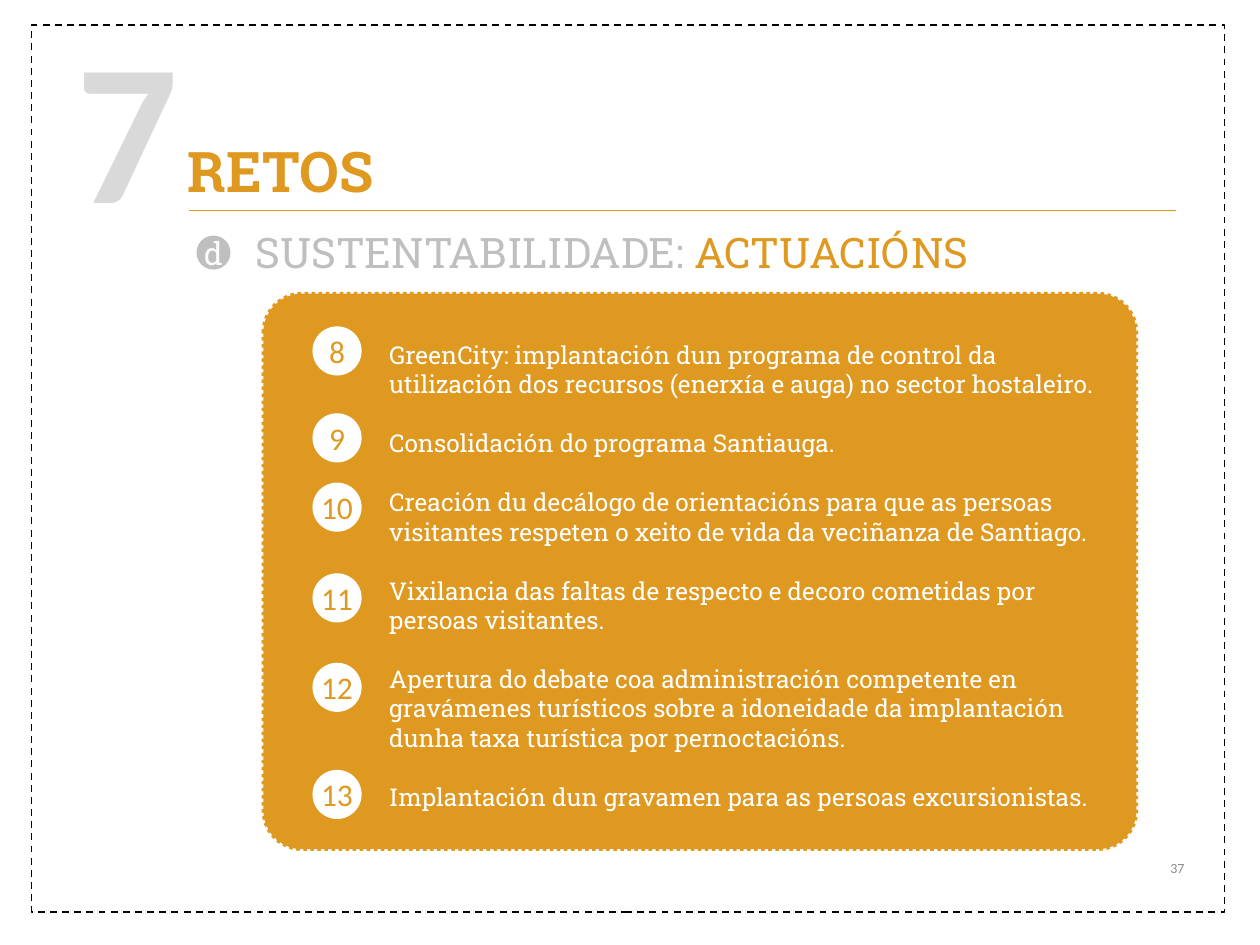
from lxml.etree import SubElement
from pptx import Presentation
from pptx.dml.color import RGBColor
from pptx.enum.dml import MSO_LINE
from pptx.enum.shapes import MSO_CONNECTOR, MSO_SHAPE as Shape
from pptx.enum.text import MSO_ANCHOR as Anchor, MSO_AUTO_SIZE, PP_ALIGN as Align
from pptx.oxml.ns import qn
from pptx.util import Inches, Pt

# Content
CHAPTER, TITLE, LETTER, PAGE_NUMBER = "7", "RETOS", "d", "37"
SUBTITLE = [("SUSTENTABILIDADE: ", "silver"), ("ACTUACIÓNS", "orange")]
ACTIONS = [  # number, top of its circle, text
    (8, 2.59, "GreenCity: implantación dun programa de control da utilización "
              "dos recursos (enerxía e auga) no sector hostaleiro."),
    (9, 3.28, "Consolidación do programa Santiauga."),
    (10, 3.83, "Creación du decálogo de orientacións para que as persoas "
               "visitantes respeten o xeito de vida da veciñanza de Santiago."),
    (11, 4.55, "Vixilancia das faltas de respecto e decoro cometidas por "
               "persoas visitantes."),
    (12, 5.26, "Apertura do debate coa administración competente en gravámenes "
               "turísticos sobre a idoneidade da implantación dunha taxa "
               "turística por pernoctacións."),
    (13, 6.11, "Implantación dun gravamen para as persoas excursionistas."),
]

# Style
COLORS = {"orange": "DF9920", "silver": "BFBFBF", "pale": "D9D9D9",
          "gray": "8C8C8C", "white": "FFFFFF", "black": "000000"}
SANS, SLAB = "Calibri", "Roboto Slab"
CIRCLE_LEFT, CIRCLE_SIZE = 2.48, 0.39
ACTION_GAP = 16.85  # one line of action text, in points


def color(name):
    return RGBColor.from_string(COLORS[name])


def set_font(font, name, size, tint, bold=False):
    font.name, font.size, font.bold = name, Pt(size), bold
    font.color.rgb = color(tint)


def add_shape(kind, left, top, width, height, fill=None, line=None):
    shape = page.shapes.add_shape(kind, *map(Inches, (left, top, width, height)))
    shape.shadow.inherit = False
    if fill:
        shape.fill.solid()
        shape.fill.fore_color.rgb = color(fill)
    else:
        shape.fill.background()
    if line:
        tint, weight, dash = line
        shape.line.color.rgb = color(tint)
        shape.line.width, shape.line.dash_style = Pt(weight), dash
    else:
        shape.line.fill.background()
    return shape


def add_badge(left, top, size, fill, text, font_name, tint):
    frame = add_shape(Shape.OVAL, left, top, size, size, fill).text_frame
    frame.margin_left = frame.margin_right = 0
    frame.margin_top = frame.margin_bottom = 0
    frame.word_wrap, frame.vertical_anchor = False, Anchor.MIDDLE
    para = frame.paragraphs[0]
    para.text, para.alignment = text, Align.CENTER
    set_font(para.font, font_name, 18, tint)


def add_text(left, top, width, height, text=""):
    box = page.shapes.add_textbox(*map(Inches, (left, top, width, height)))
    box.text_frame.word_wrap = True
    box.text_frame.text = text
    return box.text_frame


deck = Presentation()
deck.slide_width, deck.slide_height = Inches(10), Inches(7.5)
page = deck.slides.add_slide(deck.slide_layouts[5])

# Dashed frame and orange panel
add_shape(Shape.RECTANGLE, 0.25, 0.2, 9.47, 7.04,
          line=("black", 1, MSO_LINE.DASH))
panel = add_shape(Shape.ROUNDED_RECTANGLE, 2.09, 2.33, 6.93, 4.41, "orange",
                  ("orange", 2, MSO_LINE.ROUND_DOT))
panel.adjustments[0] = 0.07

# Title, chapter number and rule
title = page.shapes.title
title.left, title.top = Inches(1.39), Inches(1.03)
title.width, title.height = Inches(7.83), Inches(0.64)
frame = title.text_frame
frame.text = TITLE
frame.auto_size, frame.vertical_anchor = MSO_AUTO_SIZE.NONE, Anchor.TOP
frame.paragraphs[0].alignment = Align.LEFT
set_font(frame.paragraphs[0].font, SLAB, 32, "orange", True)

chapter = add_text(0.51, -0.03, 1.1, 2.04, CHAPTER)
set_font(chapter.paragraphs[0].font, SANS, 115, "pale", True)

rule = page.shapes.add_connector(MSO_CONNECTOR.STRAIGHT, Inches(1.5),
                                 Inches(1.67), Inches(9.33), Inches(1.67))
rule.line.color.rgb, rule.line.width = color("orange"), Pt(0.75)
SubElement(rule.element.spPr, qn("a:effectLst"))

# Subtitle with its letter
para = add_text(1.93, 1.75, 7.83, 0.5).paragraphs[0]
for text, tint in SUBTITLE:
    span = para.add_run()
    span.text = text
    set_font(span.font, SLAB, 24, tint)
add_badge(1.56, 1.87, 0.27, "silver", LETTER, SLAB, "white")

# Numbered actions
frame = add_text(2.99, 2.65, 5.95, 3.87)
for index, (number, top, text) in enumerate(ACTIONS):
    para = frame.add_paragraph() if index else frame.paragraphs[0]
    para.text = text
    if index:
        para.space_before = Pt(ACTION_GAP)
    set_font(para.font, SLAB, 14, "white")
    add_badge(CIRCLE_LEFT, top, CIRCLE_SIZE, "white", str(number), SANS, "orange")

# Page number
footer = add_text(7.17, 6.69, 2.33, 0.4, PAGE_NUMBER)
footer.vertical_anchor = Anchor.MIDDLE
footer.paragraphs[0].alignment = Align.RIGHT
set_font(footer.paragraphs[0].font, SANS, 8, "gray")

deck.save("out.pptx")
